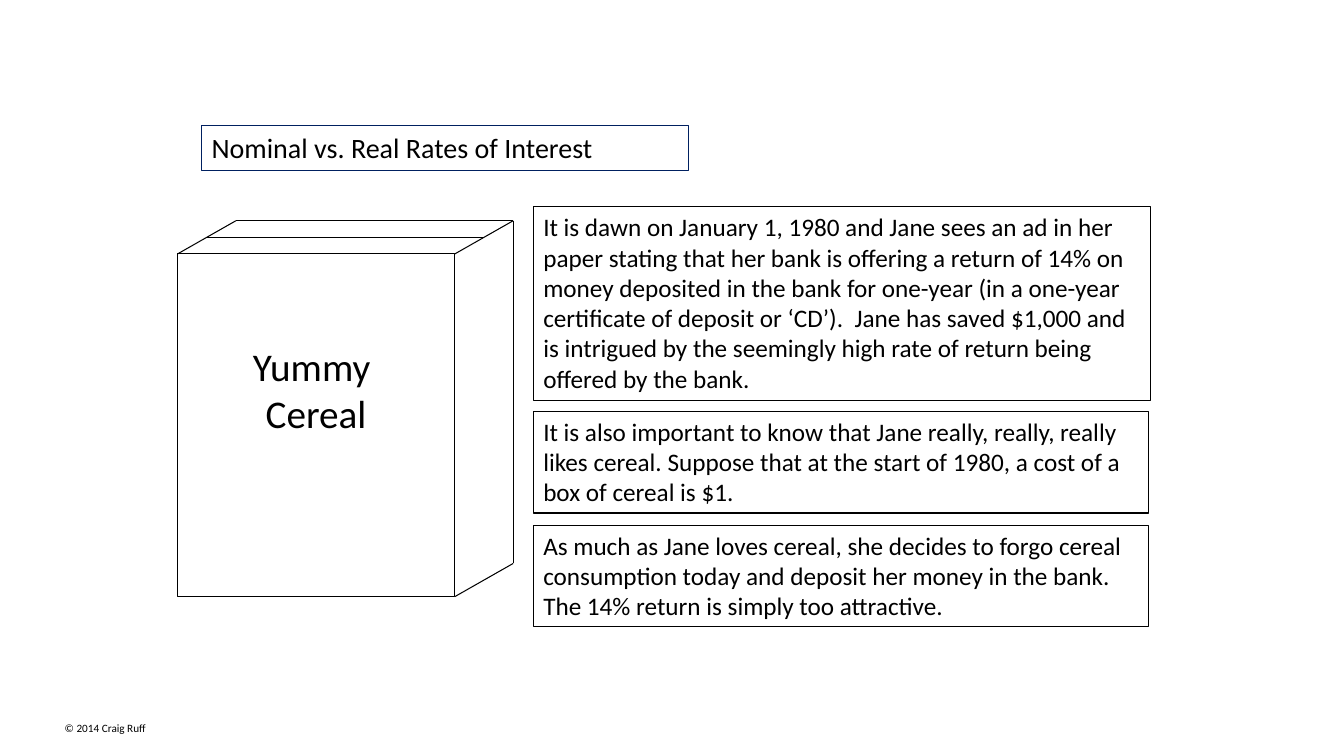
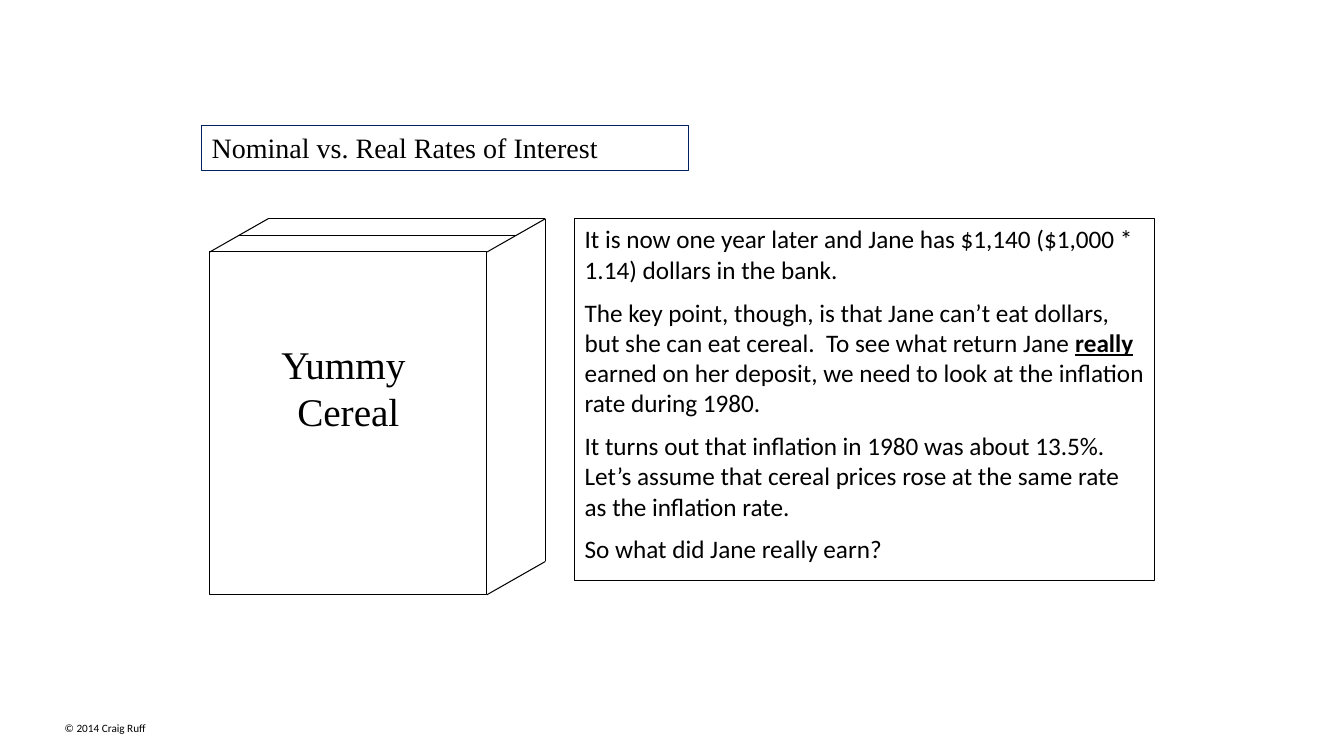
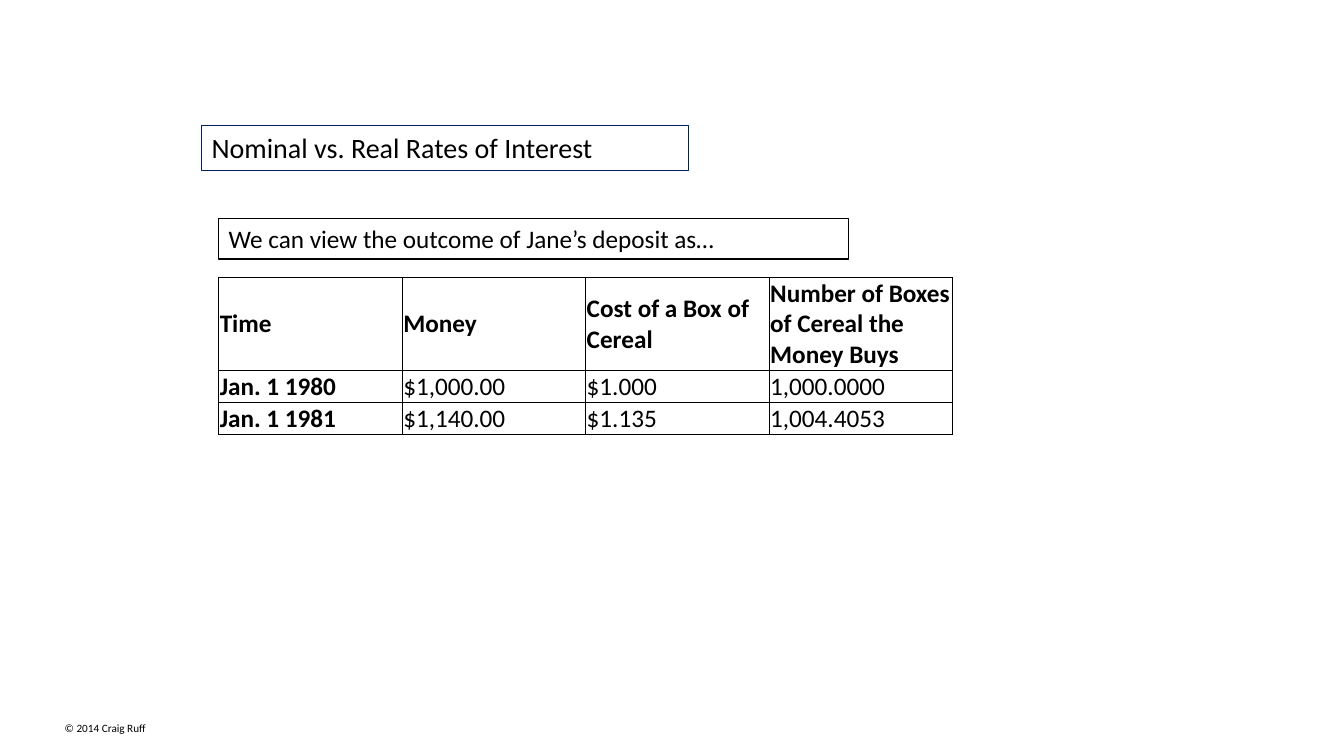
import pptx
import pptx.dml.color
import pptx.enum.shapes
import pptx.enum.text
import pptx.oxml
import pptx.oxml.ns
import pptx.util

Inches = pptx.util.Inches
Pt = pptx.util.Pt

# Shared style
BLACK, NAVY = "000000", "002060"
SANS, SERIF = "Calibri", "Times New Roman"
TITLE = "Nominal vs. Real Rates of Interest"
TITLE_FRAME = (2, 1.25, 4.83, 0.44)
FOOTER = "© 2014 Craig Ruff"
FOOTER_FRAME = (0.38, 7.11, 1.33, 0.24)
PARAGRAPH_GAP = 9

# Cereal box geometry
CEREAL_LABEL = ["Yummy ", "Cereal"]
BOX_WIDTH, BOX_HEIGHT = 2.75, 3.4
DEPTH_X, DEPTH_Y = 0.58, 0.33
LABEL_INSET = 0.88

# Content: each panel is a frame and its paragraphs; a paragraph is a string
# or a list of (text, emphasised) runs
SLIDES = [
    {
        "font": SANS,
        "cereal": (1.76, 2.52),
        "panels": [
            ((5.29, 2.05, 6.12, 1.92), [
                "It is dawn on January 1, 1980 and Jane sees an ad in her paper stating "
                "that her bank is offering a return of 14% on money deposited in the bank "
                "for one-year (in a one-year certificate of deposit or ‘CD’).  Jane has "
                "saved $1,000 and is intrigued by the seemingly high rate of return being "
                "offered by the bank."]),
            ((5.29, 4.08, 6.1, 1.01), [
                "It is also important to know that Jane really, really, really likes "
                "cereal. Suppose that at the start of 1980, a cost of a box of cereal is $1."]),
            ((5.29, 5.21, 6.1, 1.01), [
                "As much as Jane loves cereal, she decides to forgo cereal consumption "
                "today and deposit her money in the bank.  The 14% return is simply too "
                "attractive."]),
        ],
    },
    {
        "font": SERIF,
        "cereal": (2.08, 2.5),
        "panels": [
            ((5.7, 2.17, 5.75, 3.59), [
                "It is now one year later and Jane has $1,140 ($1,000 * 1.14) dollars in "
                "the bank.",
                [("The key point, though, is that Jane can’t eat dollars, but she can eat "
                  "cereal.  To see what return Jane ", False),
                 ("really", True),
                 (" earned on her deposit, we need to look at the inflation rate during "
                  "1980.", False)],
                "It turns out that inflation in 1980 was about 13.5%.  Let’s assume that "
                "cereal prices rose at the same rate as the inflation rate.",
                "So what did Jane really earn?"]),
        ],
    },
    {
        "font": SANS,
        "panels": [
            ((2.17, 2.17, 6.25, 0.4), ["We can view the outcome of Jane’s deposit as…"]),
        ],
        "table": [
            ["Time", "Money", "Cost of a Box of Cereal",
             "Number of Boxes of Cereal the Money Buys"],
            ["Jan. 1 1980", "$1,000.00", "$1.000", "1,000.0000"],
            ["Jan. 1 1981", "$1,140.00", "$1.135", "1,004.4053"],
        ],
    },
]
TABLE_LEFT, TABLE_TOP = 2.17, 2.75
COLUMN_WIDTH = 1.82
HEADER_HEIGHT, ROW_HEIGHT = 0.88, 0.29


def color(value):
    return pptx.dml.color.RGBColor.from_string(value)


def format_run(run, size, font=SANS, bold=False, underline=False):
    run.font.size = Pt(size)
    run.font.name = font
    run.font.bold = bold
    run.font.underline = underline
    run.font.color.rgb = color(BLACK)


def add_text(slide, frame, paragraphs, size=18, font=SANS, line=BLACK,
             centered=False, gap=PARAGRAPH_GAP, top_inset=0.05):
    """Add a text frame, outlined when a line colour is given."""
    position = [Inches(value) for value in frame]
    if line:
        shape = slide.shapes.add_shape(
            pptx.enum.shapes.MSO_SHAPE.RECTANGLE, *position)
        shape.shadow.inherit = False
        shape.fill.background()
        shape.line.color.rgb = color(line)
        shape.line.width = Pt(0.75)
    else:
        shape = slide.shapes.add_textbox(*position)
    text_frame = shape.text_frame
    text_frame.word_wrap = True
    text_frame.vertical_anchor = pptx.enum.text.MSO_ANCHOR.TOP
    text_frame.margin_top = Inches(top_inset)
    alignment = pptx.enum.text.PP_ALIGN
    for index, runs in enumerate(paragraphs):
        paragraph = text_frame.add_paragraph() if index else text_frame.paragraphs[0]
        paragraph.alignment = alignment.CENTER if centered else alignment.LEFT
        paragraph.space_before = Pt(gap if index else 0)
        for text, emphasised in [(runs, False)] if isinstance(runs, str) else runs:
            run = paragraph.add_run()
            run.text = text
            format_run(run, size, font, bold=emphasised, underline=emphasised)


def add_line(slide, start, end):
    connector = slide.shapes.add_connector(
        pptx.enum.shapes.MSO_CONNECTOR.STRAIGHT,
        *[Inches(value) for value in (*start, *end)])
    connector.line.color.rgb = color(BLACK)
    connector.line.width = Pt(0.75)
    properties = connector._element.spPr
    properties.append(pptx.oxml.parse_xml(
        f'<a:effectLst {pptx.oxml.ns.nsdecls("a")}/>'))


def add_cereal_box(slide, left, top, font):
    add_text(slide, (left, top, BOX_WIDTH, BOX_HEIGHT), CEREAL_LABEL, size=28,
             font=font, centered=True, gap=0, top_inset=LABEL_INSET)
    right, bottom = left + BOX_WIDTH, top + BOX_HEIGHT

    def recede(x, y, share=1):
        return x + DEPTH_X * share, y - DEPTH_Y * share

    # Receding edges, back edges, then the flap halfway back
    for corner in [(left, top), (right, top), (right, bottom)]:
        add_line(slide, corner, recede(*corner))
    add_line(slide, recede(right, top), recede(right, bottom))
    for share in (1, 0.5):
        add_line(slide, recede(left, top, share), recede(right, top, share))


def add_cell_borders(cell):
    properties = cell._tc.get_or_add_tcPr()
    for index, side in enumerate(("lnL", "lnR", "lnT", "lnB")):
        properties.insert(index, pptx.oxml.parse_xml(
            f'<a:{side} {pptx.oxml.ns.nsdecls("a")} w="{Pt(0.5)}">'
            f'<a:solidFill><a:srgbClr val="{BLACK}"/></a:solidFill></a:{side}>'))


def add_outcome_table(slide, rows):
    column_count = len(rows[0])
    heights = [HEADER_HEIGHT] + [ROW_HEIGHT] * (len(rows) - 1)
    table = slide.shapes.add_table(
        len(rows), column_count, Inches(TABLE_LEFT), Inches(TABLE_TOP),
        Inches(COLUMN_WIDTH * column_count), Inches(sum(heights))).table
    table.horz_banding = False
    for column in table.columns:
        column.width = Inches(COLUMN_WIDTH)
    for row_index, values in enumerate(rows):
        table.rows[row_index].height = Inches(heights[row_index])
        for column_index, value in enumerate(values):
            cell = table.cell(row_index, column_index)
            cell.fill.background()
            cell.margin_left = cell.margin_right = cell.margin_top = Inches(0.01)
            cell.margin_bottom = 0
            cell.vertical_anchor = pptx.enum.text.MSO_ANCHOR.MIDDLE
            run = cell.text_frame.paragraphs[0].add_run()
            run.text = value
            format_run(run, 18, bold=row_index == 0 or column_index == 0)
            add_cell_borders(cell)


def main():
    presentation = pptx.Presentation()
    presentation.slide_width = Inches(13.33)
    presentation.slide_height = Inches(7.5)
    for content in SLIDES:
        slide = presentation.slides.add_slide(presentation.slide_layouts[6])
        add_text(slide, TITLE_FRAME, [TITLE], size=20, font=content["font"], line=NAVY)
        if "cereal" in content:
            add_cereal_box(slide, *content["cereal"], content["font"])
        for frame, paragraphs in content["panels"]:
            add_text(slide, frame, paragraphs)
        if "table" in content:
            add_outcome_table(slide, content["table"])
        add_text(slide, FOOTER_FRAME, [FOOTER], size=8, line=None, centered=True)
    presentation.save("out.pptx")


if __name__ == "__main__":
    main()
